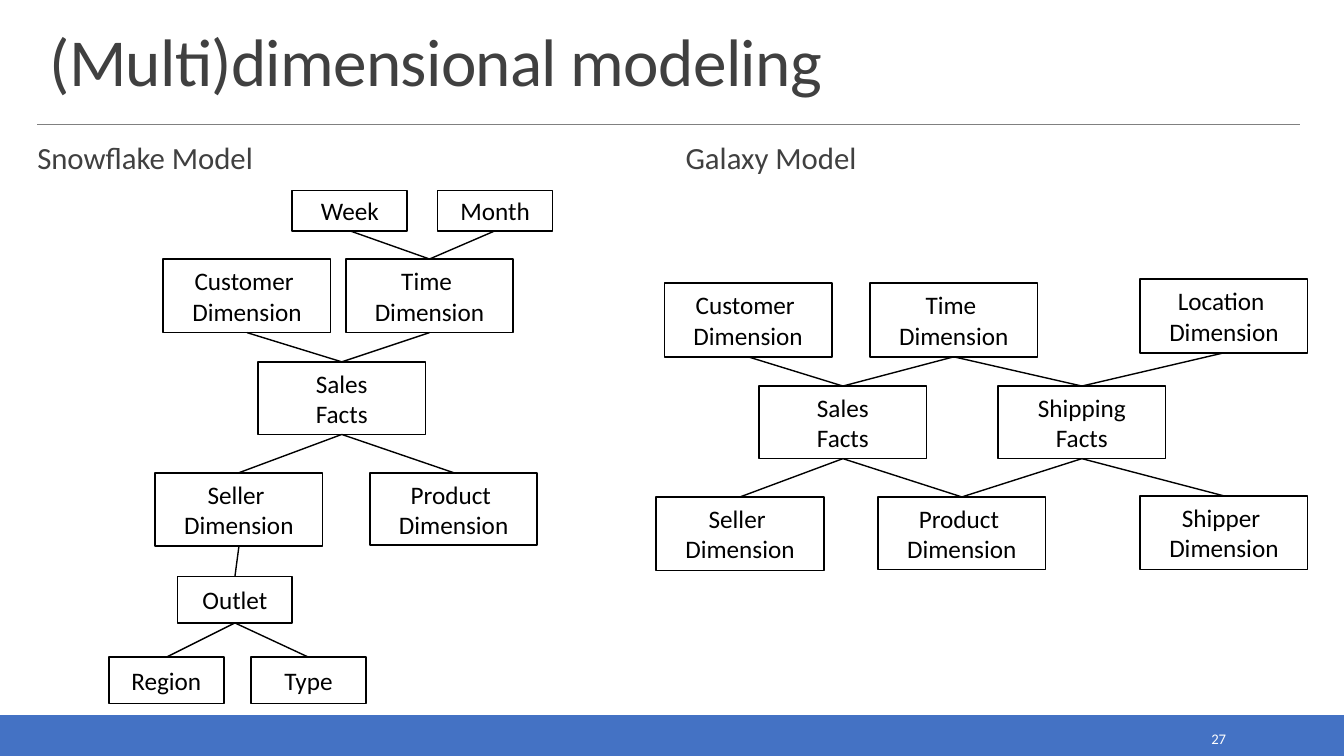
from lxml import etree
from pptx import Presentation
from pptx.dml.color import RGBColor
from pptx.enum import shapes, text
from pptx.oxml.ns import qn
from pptx.util import Inches, Pt

BLACK = RGBColor(0x00, 0x00, 0x00)
WHITE = RGBColor(0xFF, 0xFF, 0xFF)
DARK = RGBColor(0x40, 0x40, 0x40)
GREY = RGBColor(0x80, 0x80, 0x80)
BLUE = RGBColor(0x44, 0x72, 0xC4)
FONT = "Calibri"

TABLE = (1.66, 0.73)
FACTS = (1.66, 0.72)
LEVEL = (1.14, 0.4)
LOW_LEVEL = (1.14, 0.46)

# Each node: label, left and top within the model, size
SNOWFLAKE_NODES = [
    ("Week", 1.82, 0, LEVEL),
    ("Month", 3.26, 0, LEVEL),
    ("Customer \nDimension", 0.54, 0.68, TABLE),
    ("Time \nDimension", 2.35, 0.68, TABLE),
    ("Sales\nFacts", 1.48, 1.7, FACTS),
    ("Seller \nDimension", 0.46, 2.8, TABLE),
    ("Product \nDimension", 2.59, 2.8, FACTS),
    ("Outlet", 0.68, 3.83, LOW_LEVEL),
    ("Region", 0, 4.63, LOW_LEVEL),
    ("Type", 1.41, 4.63, LOW_LEVEL),
]
# Each link: upper node, lower node
SNOWFLAKE_LINKS = [
    ("Week", "Time"), ("Month", "Time"), ("Customer", "Sales"),
    ("Time", "Sales"), ("Sales", "Seller"), ("Sales", "Product"),
    ("Seller", "Outlet"), ("Outlet", "Region"), ("Outlet", "Type"),
]
GALAXY_NODES = [
    ("Customer \nDimension", 0.08, 0.04, TABLE),
    ("Time \nDimension", 2.12, 0.04, TABLE),
    ("Location \nDimension", 4.8, 0, TABLE),
    ("Sales\nFacts", 1.02, 1.06, FACTS),
    ("Shipping\nFacts", 3.39, 1.06, FACTS),
    ("Seller \nDimension", 0, 2.16, TABLE),
    ("Product \nDimension", 2.2, 2.16, FACTS),
    ("Shipper \nDimension", 4.8, 2.15, TABLE),
]
GALAXY_LINKS = [
    ("Customer", "Sales"), ("Time", "Sales"), ("Time", "Shipping"),
    ("Location", "Shipping"), ("Sales", "Seller"), ("Sales", "Product"),
    ("Shipping", "Product"), ("Shipping", "Shipper"),
]


def write(shape, words, size, color, align=text.PP_ALIGN.LEFT,
          anchor=text.MSO_ANCHOR.TOP, spacing=None, tracking=None, margins=None):
    """Put one paragraph in a shape; margins are (sides, top and bottom)."""
    frame = shape.text_frame
    frame.word_wrap = True
    frame.auto_size = text.MSO_AUTO_SIZE.NONE
    frame.vertical_anchor = anchor
    if margins:
        frame.margin_left = frame.margin_right = Inches(margins[0])
        frame.margin_top = frame.margin_bottom = Inches(margins[1])
    para = frame.paragraphs[0]
    para.text = words
    para.alignment = align
    para.line_spacing = spacing
    for span in para.runs:
        span.font.name = FONT
        span.font.size = Pt(size)
        span.font.color.rgb = color
        if tracking is not None:
            span.font._element.set("spc", str(round(tracking * 100)))


def add_rect(page, left, top, width, height, line_color, fill=None):
    rect = page.shapes.add_shape(shapes.MSO_SHAPE.RECTANGLE, Inches(left),
                                 Inches(top), Inches(width), Inches(height))
    rect.shadow.inherit = False
    if fill is None:
        rect.fill.background()
    else:
        rect.fill.solid()
        rect.fill.fore_color.rgb = fill
    rect.line.color.rgb = line_color
    rect.line.width = Pt(1.25)
    return rect


def add_line(page, color, weight, start=(0, 0), end=(0, 0)):
    line = page.shapes.add_connector(shapes.MSO_CONNECTOR.STRAIGHT,
                                     *map(Inches, start + end))
    line.line.color.rgb = color
    line.line.width = Pt(weight)
    etree.SubElement(line._element.spPr, qn("a:effectLst"))
    return line


def add_header(page, left, top, width, height):
    title = page.shapes.title
    title.left, title.top = Inches(left), Inches(top)
    title.width, title.height = Inches(width), Inches(height)
    write(title, "(Multi)dimensional modeling", 48, DARK,
          anchor=text.MSO_ANCHOR.BOTTOM, spacing=0.85, tracking=-0.5)
    rule = top + height + 0.19
    add_line(page, GREY, 0.5, (left - 0.02, rule), (left + width - 0.02, rule))


def add_footer(page, left, top, width, height):
    add_rect(page, left, top, width, height, BLUE, BLUE)
    number = page.shapes.add_textbox(Inches(left + width - 2.5), Inches(top + 0.09),
                                     Inches(1.43), Inches(0.28))
    write(number, "27", 10.5, WHITE, align=text.PP_ALIGN.RIGHT,
          anchor=text.MSO_ANCHOR.MIDDLE)


def add_heading(page, words, left, top, width, height):
    heading = page.shapes.add_textbox(Inches(left), Inches(top),
                                      Inches(width), Inches(height))
    write(heading, words, 22, DARK, spacing=0.9, margins=(0, 0.04))


def add_model(page, left, top, nodes, links):
    """Draw the nodes, then join each upper node's bottom to a lower node's top."""
    boxes = {}
    for label, across, down, size in nodes:
        box = add_rect(page, left + across, top + down, *size, BLACK)
        write(box, label, 18, BLACK, align=text.PP_ALIGN.CENTER,
              anchor=text.MSO_ANCHOR.MIDDLE)
        boxes[label.split()[0]] = box
    for upper, lower in links:
        link = add_line(page, BLACK, 1)
        link.begin_connect(boxes[upper], 2)
        link.end_connect(boxes[lower], 0)


def main():
    deck = Presentation()
    deck.slide_width, deck.slide_height = Inches(13.33), Inches(7.5)
    page = deck.slides.add_slide(deck.slide_layouts.get_by_name("Title Only"))
    add_footer(page, 0, 7.1, 13.33, 0.4)
    add_header(page, 0.39, 0.2, 12.52, 0.84)
    add_heading(page, "Snowflake Model", 0.37, 1.38, 6.23, 0.4)
    add_heading(page, "Galaxy Model", 6.8, 1.38, 6.09, 0.4)
    add_model(page, 1.08, 1.89, SNOWFLAKE_NODES, SNOWFLAKE_LINKS)
    add_model(page, 6.51, 2.77, GALAXY_NODES, GALAXY_LINKS)
    deck.save("out.pptx")


if __name__ == "__main__":
    main()
